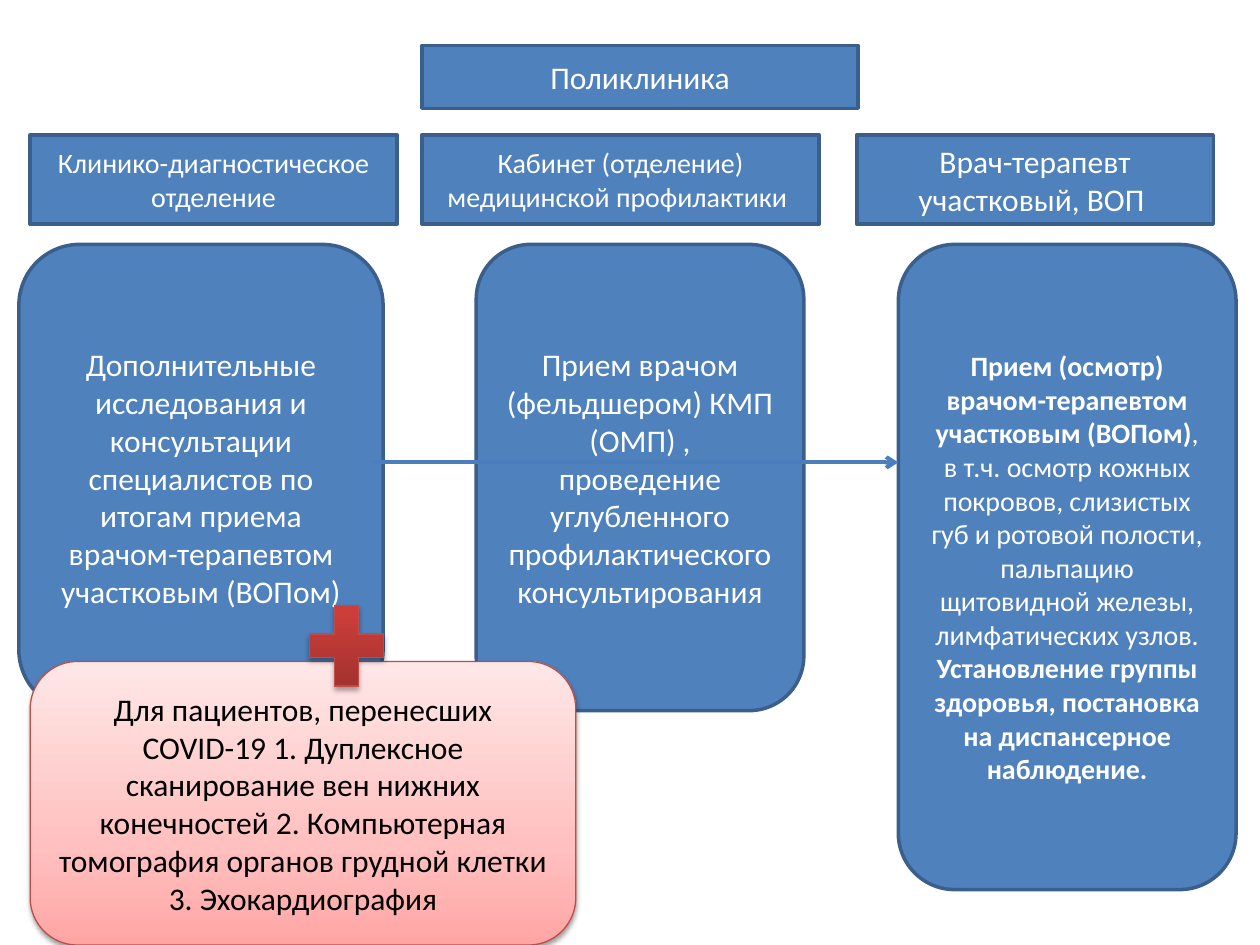
from lxml import etree
from pptx import Presentation
from pptx.dml.color import RGBColor
from pptx.enum.shapes import MSO_CONNECTOR, MSO_SHAPE
from pptx.enum.text import MSO_ANCHOR, PP_ALIGN
from pptx.oxml import parse_xml
from pptx.oxml.ns import qn
from pptx.util import Inches, Pt

NS = 'xmlns:a="http://schemas.openxmlformats.org/drawingml/2006/main"'
COLORS = {
    "blue": "4F81BD", "border": "3A5F8C", "arrow": "4B7EBC",
    "white": "FFFFFF", "black": "000000", "red": "BF4C48",
}
PINK_STOPS = [(0, "FFA6A5"), (35, "FFC0BF"), (100, "FFE7E7")]
RED_STOPS = [(0, "9C2F2D"), (80, "CB3E3A"), (100, "CE3B37")]


def rgb(name):
    return RGBColor.from_string(COLORS[name])


def write_text(sp, runs, size=18, color="white"):
    tf = sp.text_frame
    tf.word_wrap = True
    tf.vertical_anchor = MSO_ANCHOR.MIDDLE
    p = tf.paragraphs[0]
    p.alignment = PP_ALIGN.CENTER
    for text, bold in runs:
        r = p.add_run()
        r.text = text
        r.font.name = "Calibri"
        r.font.size = Pt(size)
        r.font.bold = bold
        r.font.color.rgb = rgb(color)


def style_blue(sp):
    sp.shadow.inherit = False
    sp.fill.solid()
    sp.fill.fore_color.rgb = rgb("blue")
    sp.line.color.rgb = rgb("border")
    sp.line.width = Pt(2)


def style_glossy(sp, stops, alpha, dist):
    sp.fill.solid()
    sp.line.color.rgb = rgb("red")
    sp.line.width = Pt(0.75)
    sp.shadow.inherit = False
    spPr = sp.element.spPr
    gs = "".join(
        f'<a:gs pos="{pos * 1000}"><a:srgbClr val="{color}"/></a:gs>'
        for pos, color in stops
    )
    spPr.replace(spPr.find(qn("a:solidFill")), parse_xml(
        f'<a:gradFill {NS} rotWithShape="1"><a:gsLst>{gs}</a:gsLst>'
        '<a:lin ang="16200000" scaled="0"/></a:gradFill>'))
    spPr.find(qn("a:effectLst")).append(parse_xml(
        f'<a:outerShdw {NS} blurRad="{Pt(3.1)}" dist="{Pt(dist)}" dir="5400000" '
        f'rotWithShape="0"><a:srgbClr val="{COLORS["black"]}">'
        f'<a:alpha val="{alpha * 1000}"/></a:srgbClr></a:outerShdw>'))


def add_box(s, kind, left, top, width, height):
    return s.shapes.add_shape(
        kind, Inches(left), Inches(top), Inches(width), Inches(height))


def add_title(s, left, top, width, height):
    sp = s.shapes.title
    sp.left, sp.top = Inches(left), Inches(top)
    sp.width, sp.height = Inches(width), Inches(height)
    style_blue(sp)
    write_text(sp, [("Поликлиника", False)])


def add_row(s, kind, top, items):
    for left, width, height, size, runs in items:
        sp = add_box(s, kind, left, top, width, height)
        style_blue(sp)
        write_text(sp, runs, size=size)


def add_arrow(s, x1, x2, y):
    c = s.shapes.add_connector(
        MSO_CONNECTOR.STRAIGHT, Inches(x1), Inches(y), Inches(x2), Inches(y))
    c.line.color.rgb = rgb("arrow")
    c.line.width = Pt(2.25)
    etree.SubElement(c.line._get_or_add_ln(), qn("a:tailEnd"), type="arrow")
    etree.SubElement(c._element.spPr, qn("a:effectLst"))


def add_covid_note(s, left, top, width, height):
    note = add_box(s, MSO_SHAPE.ROUNDED_RECTANGLE, left, top, width, height)
    style_glossy(note, PINK_STOPS, alpha=38, dist=1.6)
    write_text(note, [(
        "Для пациентов, перенесших COVID-19 1. Дуплексное сканирование вен "
        "нижних конечностей 2. Компьютерная томография органов грудной клетки "
        "3. Эхокардиография", False)], color="black")
    plus = add_box(s, MSO_SHAPE.MATH_PLUS, left + 2.11, top - 0.56, 0.8, 0.87)
    style_glossy(plus, RED_STOPS, alpha=35, dist=1.8)


def main():
    prs = Presentation()
    prs.slide_width, prs.slide_height = Inches(10), Inches(7.5)
    s = prs.slides.add_slide(prs.slide_layouts[5])
    add_title(s, 3.35, 0.36, 3.46, 0.5)
    add_row(s, MSO_SHAPE.RECTANGLE, 1.07, [
        (0.24, 2.91, 0.71, 16, [("Клинико-диагностическое отделение", False)]),
        (3.35, 3.15, 0.71, 16,
         [("Кабинет (отделение) медицинской профилактики ", False)]),
        (6.8, 2.83, 0.71, 18, [("Врач-терапевт участковый, ВОП ", False)]),
    ])
    add_row(s, MSO_SHAPE.ROUNDED_RECTANGLE, 1.94, [
        (0.15, 2.89, 3.7, 18, [(
            "Дополнительные исследования и консультации специалистов по итогам "
            "приема врачом-терапевтом участковым (ВОПом)", False)]),
        (3.78, 2.6, 3.7, 18, [(
            "Прием врачом (фельдшером) КМП (ОМП) , проведение углубленного "
            "профилактического консультирования", False)]),
        (7.13, 2.68, 5.12, 16, [
            ("Прием (осмотр) врачом-терапевтом участковым (ВОПом)", True),
            (", в т.ч. осмотр кожных покровов, слизистых губ и ротовой полости, "
             "пальпацию щитовидной железы, лимфатических узлов. ", False),
            ("Установление группы здоровья, постановка на диспансерное "
             "наблюдение.", True)]),
    ])
    add_arrow(s, 2.95, 7.13, 3.67)
    add_covid_note(s, 0.24, 5.25, 4.33, 2.25)
    prs.save("out.pptx")


if __name__ == "__main__":
    main()
